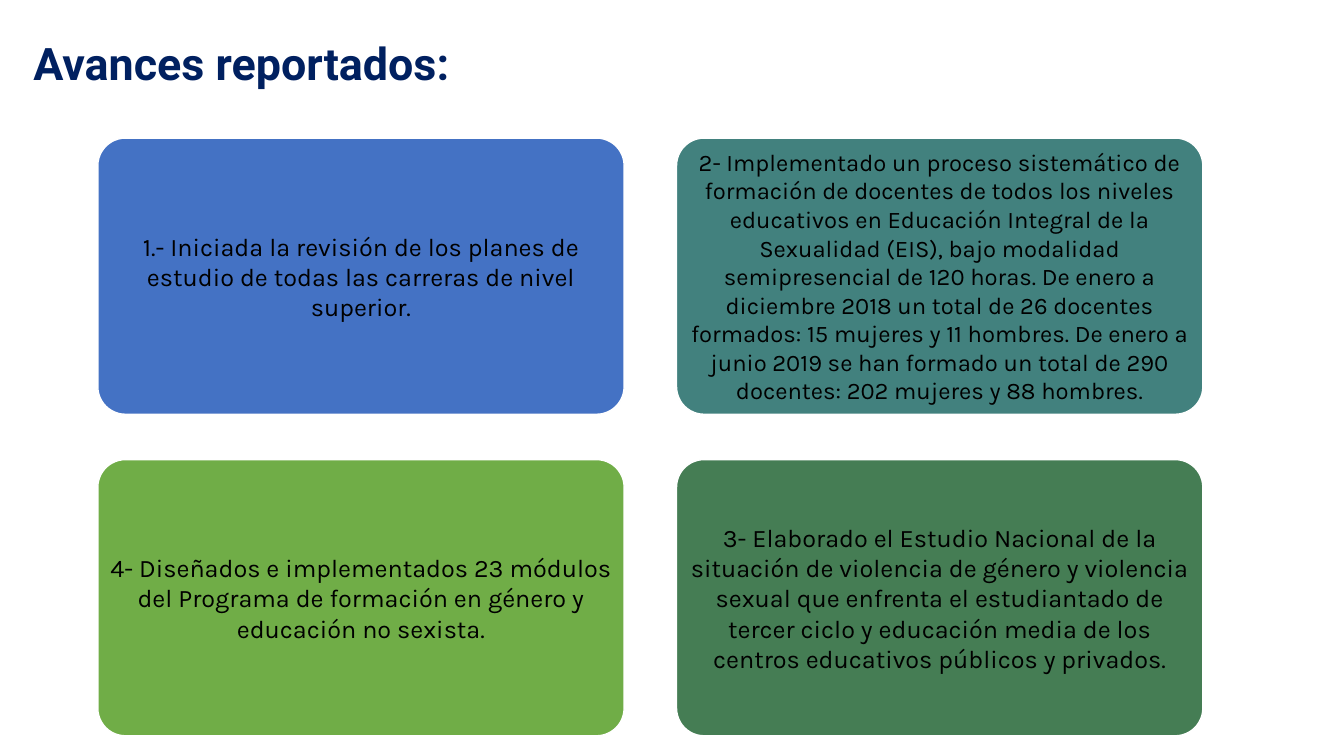
from dataclasses import dataclass

from pptx import Presentation
from pptx.dml.color import RGBColor
from pptx.enum.shapes import MSO_SHAPE as Preset
from pptx.enum.text import MSO_ANCHOR as Anchor, MSO_AUTO_SIZE as AutoSize, PP_ALIGN as Align
from pptx.slide import Slide
from pptx.text.text import TextFrame
from pptx.util import Inches, Pt


@dataclass(frozen=True)
class Theme:
    title_font: str = "Roboto"
    body_font: str = "Karla"
    title_size: int = 32
    body_size: int = 18
    dense_size: int = 17
    navy: str = "002060"
    black: str = "000000"
    white: str = "FFFFFF"
    blue: str = "4472C4"
    teal: str = "42817E"
    forest: str = "457D54"
    lime: str = "70AD47"


@dataclass(frozen=True)
class Grid:
    left: float = 0.97
    top: float = 1.37
    width: float = 5.22
    height: float = 2.74
    column_step: float = 5.74
    row_step: float = 3.19


@dataclass(frozen=True)
class Card:
    column: int
    row: int
    fill: str
    text: str
    size: int


THEME = Theme()
GRID = Grid()

CARDS = [
    Card(0, 0, THEME.blue,
         "1.- Iniciada la revisión de los planes de estudio de todas las carreras "
         "de nivel superior.", THEME.body_size),
    Card(1, 0, THEME.teal,
         "2- Implementado un proceso sistemático de formación de docentes de todos "
         "los niveles educativos en Educación Integral de la Sexualidad (EIS), bajo "
         "modalidad semipresencial de 120 horas. De enero a diciembre 2018 un total "
         "de 26 docentes formados: 15 mujeres y 11 hombres. De enero a junio 2019 se "
         "han formado un total de 290 docentes: 202 mujeres y 88 hombres.",
         THEME.dense_size),
    Card(1, 1, THEME.forest,
         "3- Elaborado el Estudio Nacional de la situación de violencia de género y "
         "violencia sexual que enfrenta el estudiantado de tercer ciclo y educación "
         "media de los centros educativos públicos y privados.", THEME.body_size),
    Card(0, 1, THEME.lime,
         "4- Diseñados e implementados 23 módulos del Programa de formación en género "
         "y educación no sexista.", THEME.body_size),
]


def color(code: str) -> RGBColor:
    return RGBColor.from_string(code)


def write(frame: TextFrame, text: str, font: str, size: int, ink: str,
          align: Align, inset: float, bold: bool = False, spacing: float = 1.0) -> None:
    frame.word_wrap = True
    frame.auto_size = AutoSize.NONE
    frame.vertical_anchor = Anchor.MIDDLE
    frame.margin_left = frame.margin_right = Inches(inset)
    frame.margin_top = frame.margin_bottom = Inches(inset)
    para = frame.paragraphs[0]
    para.alignment = align
    para.line_spacing = spacing
    span = para.add_run()
    span.text = text
    span.font.name = font
    span.font.size = Pt(size)
    span.font.bold = bold
    span.font.color.rgb = color(ink)


def add_title(page: Slide, text: str) -> None:
    title = page.shapes.title
    title.left, title.top = Inches(0.28), Inches(0.14)
    title.width, title.height = Inches(11.5), Inches(1.02)
    write(title.text_frame, text, THEME.title_font, THEME.title_size, THEME.navy,
          Align.LEFT, 0.05, bold=True, spacing=0.9)


def add_card(page: Slide, card: Card) -> None:
    box = page.shapes.add_shape(
        Preset.ROUNDED_RECTANGLE,
        Inches(GRID.left + card.column * GRID.column_step),
        Inches(GRID.top + card.row * GRID.row_step),
        Inches(GRID.width), Inches(GRID.height))
    box.adjustments[0] = 0.1
    box.shadow.inherit = False
    box.fill.solid()
    box.fill.fore_color.rgb = color(card.fill)
    box.line.color.rgb = color(THEME.white)
    box.line.width = Pt(1)
    write(box.text_frame, card.text, THEME.body_font, card.size, THEME.black,
          Align.CENTER, 0)


def main() -> None:
    deck = Presentation()
    deck.slide_width, deck.slide_height = Inches(13.33), Inches(7.5)
    page = deck.slides.add_slide(deck.slide_layouts.get_by_name("Title Only"))
    add_title(page, "Avances reportados:")
    for card in CARDS:
        add_card(page, card)
    deck.save("out.pptx")


if __name__ == "__main__":
    main()
